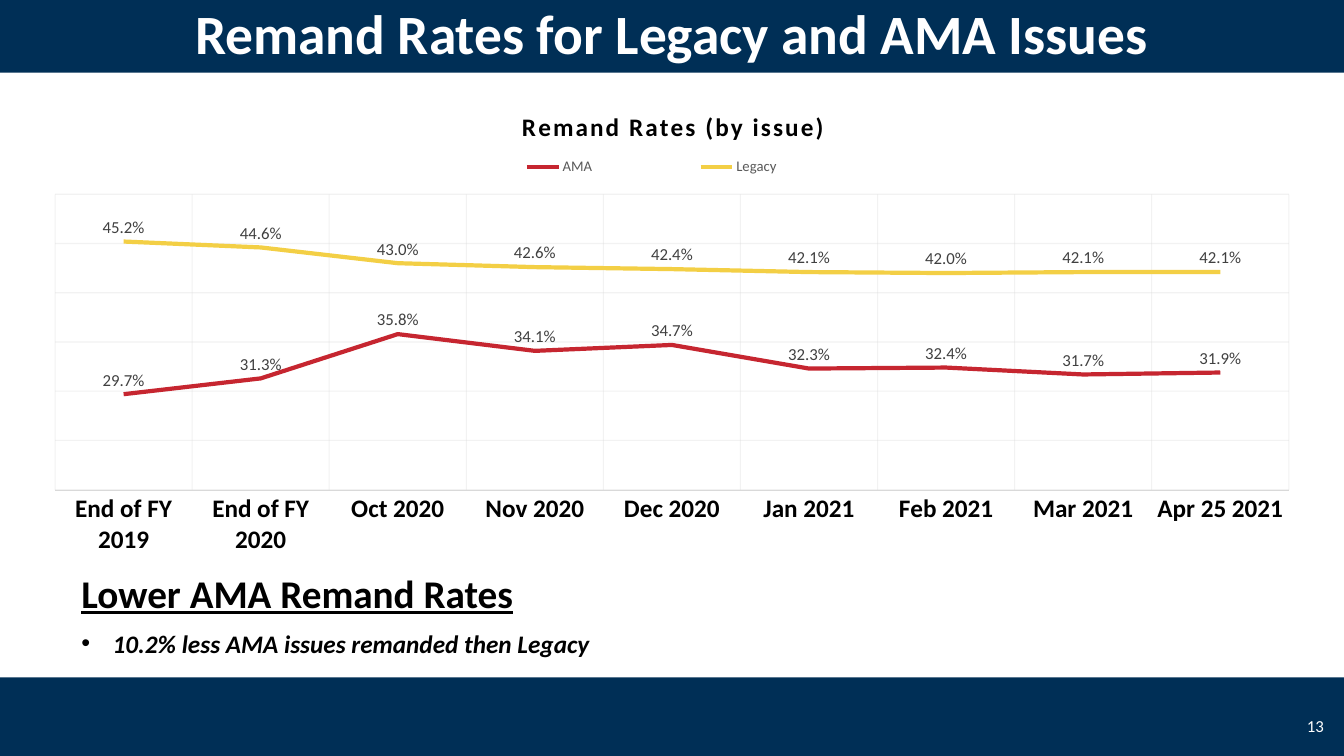
import pptx
import pptx.chart.data
import pptx.dml.color
import pptx.enum.chart
import pptx.enum.shapes
import pptx.enum.text
import pptx.oxml
import pptx.oxml.ns
import pptx.util

RGBColor = pptx.dml.color.RGBColor
NAVY = RGBColor(0x00, 0x2F, 0x56)
WHITE = RGBColor(0xFF, 0xFF, 0xFF)
BLACK = RGBColor(0x00, 0x00, 0x00)
RED = RGBColor(0xC6, 0x26, 0x30)
YELLOW = RGBColor(0xF3, 0xCF, 0x45)
GRID = RGBColor(0xD9, 0xD9, 0xD9)
LEGEND_GREY = RGBColor(0x59, 0x59, 0x59)
LABEL_GREY = RGBColor(0x40, 0x40, 0x40)

FONT = "Calibri"
WIDTH, HEIGHT = 13.33, 7.5
BAND = 0.8
TEXT_LEFT = 0.71
PERCENT = "0.0%"
ALIGN = pptx.enum.text.PP_ALIGN
ANCHOR = pptx.enum.text.MSO_ANCHOR

MONTHS = ["End of FY 2019", "End of FY 2020", "Oct 2020", "Nov 2020", "Dec 2020",
          "Jan 2021", "Feb 2021", "Mar 2021", "Apr 25 2021"]
REMAND_RATES = [
    ("AMA", RED, (0.297, 0.313, 0.358, 0.341, 0.347, 0.323, 0.324, 0.317, 0.319)),
    ("Legacy", YELLOW, (0.452, 0.446, 0.43, 0.426, 0.424, 0.421, 0.42, 0.421, 0.421)),
]


def inches(box):
    return [pptx.util.Inches(v) for v in box]


def style_font(font, size, color, bold=False, italic=False, underline=False):
    font.name, font.size = FONT, pptx.util.Pt(size)
    font.color.rgb = color
    font.bold, font.italic, font.underline = bold, italic, underline


def add_band(slide, box):
    sp = slide.shapes.add_shape(pptx.enum.shapes.MSO_SHAPE.RECTANGLE, *inches(box))
    sp.shadow.inherit = False
    sp.fill.solid()
    sp.fill.fore_color.rgb = NAVY
    sp.line.fill.background()


def add_text(slide, box, text, size, color, align=ALIGN.LEFT, anchor=ANCHOR.TOP,
             bullet=False, **style):
    tf = slide.shapes.add_textbox(*inches(box)).text_frame
    tf.word_wrap = True
    tf.vertical_anchor = anchor
    p = tf.paragraphs[0]
    p.alignment = align
    if bullet:
        pPr = p._p.get_or_add_pPr()
        indent = pptx.util.Inches(0.31)
        pPr.set("marL", str(indent))
        pPr.set("indent", str(-indent))
        mark = pptx.oxml.parse_xml(
            f'<a:buFont {pptx.oxml.ns.nsdecls("a")} typeface="Arial"/>')
        pPr.append(mark)
        mark = pptx.oxml.parse_xml(
            f'<a:buChar {pptx.oxml.ns.nsdecls("a")} char="•"/>')
        pPr.append(mark)
    r = p.add_run()
    r.text = text
    style_font(r.font, size, color, **style)


def set_layout(element, x, y, w=None, h=None, inner=False):
    for old in element.findall(pptx.oxml.ns.qn("c:layout")):
        element.remove(old)
    parts = ['<c:layoutTarget val="inner"/>'] if inner else []
    parts += ['<c:xMode val="edge"/>', '<c:yMode val="edge"/>']
    parts += [f'<c:{name} val="{value}"/>'
              for name, value in zip("xywh", (x, y, w, h)) if value is not None]
    layout = pptx.oxml.parse_xml(
        f'<c:layout {pptx.oxml.ns.nsdecls("c")}><c:manualLayout>'
        f'{"".join(parts)}</c:manualLayout></c:layout>')
    overlay = element.find(pptx.oxml.ns.qn("c:overlay"))
    if overlay is None:
        element.insert(0, layout)
    else:
        overlay.addprevious(layout)


def style_grid(axis):
    axis.has_major_gridlines = True
    line = axis.major_gridlines.format.line
    line.width = pptx.util.Pt(0.75)
    line.color.rgb = GRID
    color = axis._element.find(".//" + pptx.oxml.ns.qn("c:majorGridlines")).find(
        ".//" + pptx.oxml.ns.qn("a:srgbClr"))
    color.append(pptx.oxml.parse_xml(
        f'<a:alpha {pptx.oxml.ns.nsdecls("a")} val="32000"/>'))


def style_axes(chart):
    months, rates = chart.category_axis, chart.value_axis
    months.major_tick_mark = pptx.enum.chart.XL_TICK_MARK.NONE
    style_font(months.tick_labels.font, 18, BLACK, bold=True)
    months.format.line.width = pptx.util.Pt(0.25)
    months.format.line.color.rgb = GRID
    rates.minimum_scale, rates.maximum_scale, rates.major_unit = 0.2, 0.5, 0.05
    rates.visible = False
    style_grid(months)
    style_grid(rates)


def style_series(series, color):
    series.smooth = False
    series.format.line.width = pptx.util.Pt(3)
    series.format.line.color.rgb = color
    series.marker.style = pptx.enum.chart.XL_MARKER_STYLE.NONE
    labels = series.data_labels
    labels.show_value = True
    labels.number_format, labels.number_format_is_linked = PERCENT, False
    labels.position = pptx.enum.chart.XL_LABEL_POSITION.ABOVE
    style_font(labels.font, 12, LABEL_GREY)


def add_rate_chart(slide, box):
    data = pptx.chart.data.CategoryChartData(number_format=PERCENT)
    data.categories = MONTHS
    for name, _, values in REMAND_RATES:
        data.add_series(name, values)
    chart = slide.shapes.add_chart(
        pptx.enum.chart.XL_CHART_TYPE.LINE, *inches(box), data).chart
    style_font(chart.font, 10, BLACK)
    plot = chart.plots[0]
    plot.vary_by_categories = False
    for series, (_, color, _) in zip(plot.series, REMAND_RATES):
        style_series(series, color)
    style_axes(chart)

    chart.has_title = True
    title = chart.chart_title
    r = title.text_frame.paragraphs[0].add_run()
    r.text = "Remand Rates (by issue)"
    style_font(r.font, 18, BLACK, bold=True)
    r.font._element.set("spc", "150")
    set_layout(title._element, 0.385, 0.045)

    chart.has_legend = True
    legend = chart.legend
    legend.position = pptx.enum.chart.XL_LEGEND_POSITION.TOP
    legend.include_in_layout = False
    style_font(legend.font, 10.5, LEGEND_GREY)
    set_layout(legend._element, 0.315, 0.135, 0.34, 0.05)
    set_layout(chart._chartSpace.chart.plotArea, 0.041, 0.21, 0.918, 0.546, inner=True)


def add_header(slide, box):
    add_band(slide, box)
    add_text(slide, box, "Remand Rates for Legacy and AMA Issues", 39.6, WHITE,
             ALIGN.CENTER, ANCHOR.MIDDLE, bold=True)


def add_footer(slide, box):
    left, top, width, height = box
    add_band(slide, box)
    add_text(slide, (left + width - 0.66, top + 0.28, 0.56, height / 2), "13", 12,
             WHITE, ALIGN.RIGHT, ANCHOR.MIDDLE)


def add_takeaway(slide, box):
    left, top, width, height = box
    heading = 0.58
    add_text(slide, (left, top, width, heading), "Lower AMA Remand Rates", 28, BLACK,
             bold=True, underline=True)
    add_text(slide, (left, top + heading, width, height - heading),
             "10.2% less AMA issues remanded then Legacy", 18, BLACK,
             bullet=True, bold=True, italic=True)


def main():
    prs = pptx.Presentation()
    prs.slide_width, prs.slide_height = inches((WIDTH, HEIGHT))
    slide = prs.slides.add_slide(prs.slide_layouts[6])
    add_header(slide, (0, -0.08, WIDTH, BAND))
    add_footer(slide, (0, 6.72, WIDTH, BAND))
    add_rate_chart(slide, (0, BAND, WIDTH, 5.37))
    add_takeaway(slide, (TEXT_LEFT, 5.6, 11.45, 1.1))
    prs.save("out.pptx")


if __name__ == "__main__":
    main()
